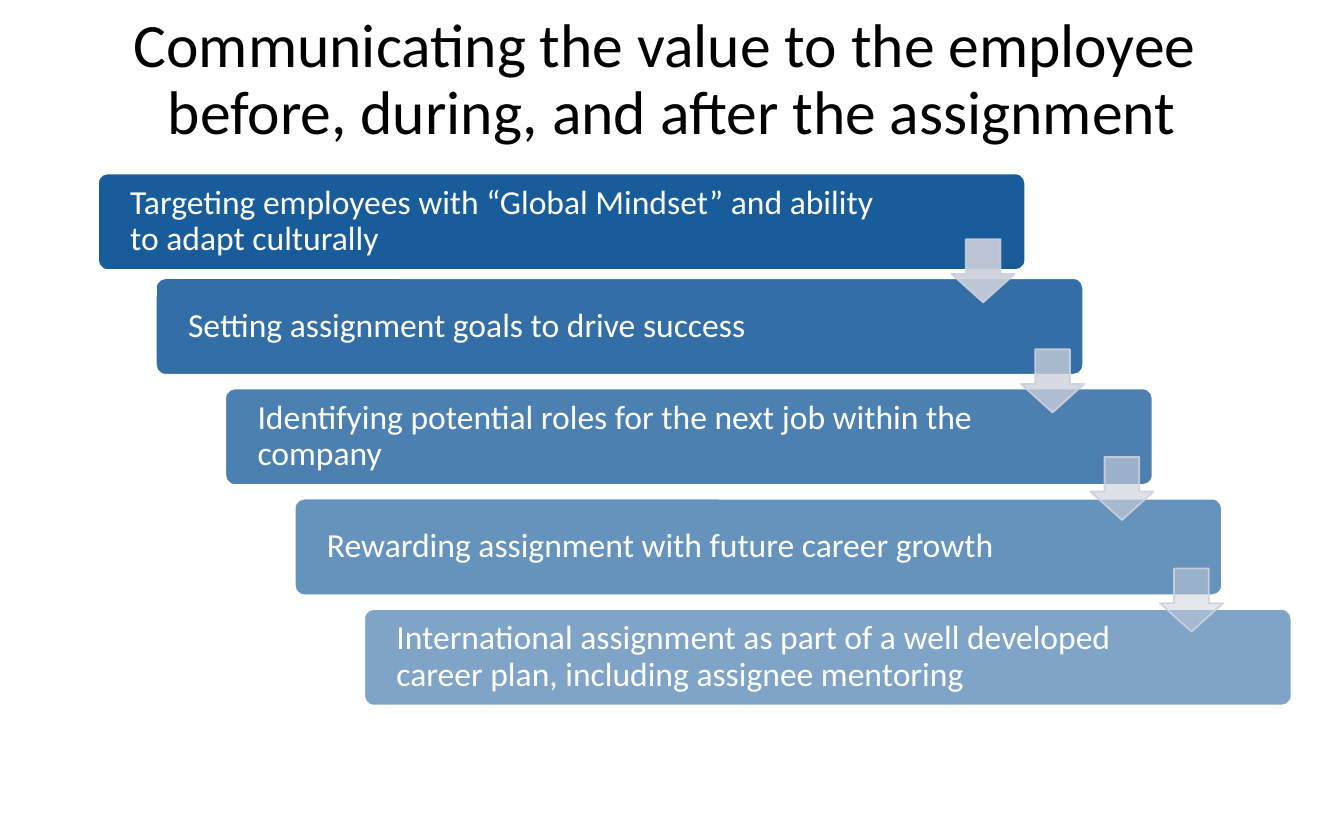
"""Build a slide with a staircase of five assignment steps joined by arrows."""
from lxml import etree
from pptx import Presentation
from pptx.dml.color import RGBColor
from pptx.enum.shapes import MSO_SHAPE
from pptx.enum.text import MSO_ANCHOR, PP_ALIGN
from pptx.oxml.ns import qn
from pptx.util import Pt

BOX, ARROW = MSO_SHAPE.ROUNDED_RECTANGLE, MSO_SHAPE.DOWN_ARROW
MIDDLE = MSO_ANCHOR.MIDDLE
LEFT, CENTER = PP_ALIGN.LEFT, PP_ALIGN.CENTER

COLORS = {"step": "004B90", "arrow": "CCD0DB", "white": "FFFFFF", "black": "000000"}
STEPS = [
    ("Targeting employees with “Global Mindset” and ability to adapt culturally", 52.5, 92.9, 65.5),
    ("Setting assignment goals to drive success", 83.5, 149, 77),
    ("Identifying potential roles for the next job within the company", 120.7, 208.1, 77),
    ("Rewarding assignment with future career growth", 157.9, 267.1, 77),
    ("International assignment as part of a well developed career plan, including assignee mentoring",
     195.1, 326.2, 77),
]
ARROWS = [(128.2, 90), (187.2, 77), (244.8, 63), (304.6, 50)]


def add_block(kind, box, adjustments, fill, line, alphas):
    sp = s.shapes.add_shape(kind, *map(Pt, box))
    sp.shadow.inherit = False
    for i, value in enumerate(adjustments):
        sp.adjustments[i] = value
    sp.fill.solid()
    sp.fill.fore_color.rgb = RGBColor.from_string(COLORS[fill])
    sp.line.color.rgb = RGBColor.from_string(COLORS[line])
    sp.line.width = Pt(1)
    for clr, alpha in zip(sp._element.spPr.iter(qn("a:srgbClr")), alphas):
        etree.SubElement(clr, qn("a:alpha")).set("val", str(alpha * 1000))
    return sp


def write(sp, text, size, color, align, margins):
    tf = sp.text_frame
    frame = {"word_wrap": True, "vertical_anchor": MIDDLE}
    sides = ("margin_left", "margin_top", "margin_right", "margin_bottom")
    frame.update(zip(sides, map(Pt, margins)))
    for name, value in frame.items():
        setattr(tf, name, value)
    p = tf.paragraphs[0]
    p.text = text
    p.alignment = align
    p.line_spacing = 0.9
    for r in p.runs:
        for name, value in {"name": "Calibri", "size": Pt(size)}.items():
            setattr(r.font, name, value)
        r.font.color.rgb = RGBColor.from_string(COLORS[color])


prs = Presentation()
prs.slide_width, prs.slide_height = Pt(720), Pt(450)
s = prs.slides.add_slide(prs.slide_layouts[6])

title = s.shapes.add_textbox(Pt(0), Pt(0), Pt(720), Pt(87))
write(title, "Communicating the value to the employee \vbefore, during, and after the assignment",
      33, "black", CENTER, (7.2, 3.6, 7.2, 3.6))

for i, (text, left, top, right_margin) in enumerate(STEPS):
    sp = add_block(BOX, (left, top, 496.8, 51.8), [0.1], "step", "white", [90 - 10 * i])
    write(sp, text, 18, "white", LEFT, (15.8, 5, right_margin, 5))

for i, (top, alpha) in enumerate(ARROWS):
    add_block(ARROW, (509.8 + 37.2 * i, top, 33.8, 33.8), [0.55, 0.45], "arrow", "arrow", [alpha, 90])

prs.save("out.pptx")
